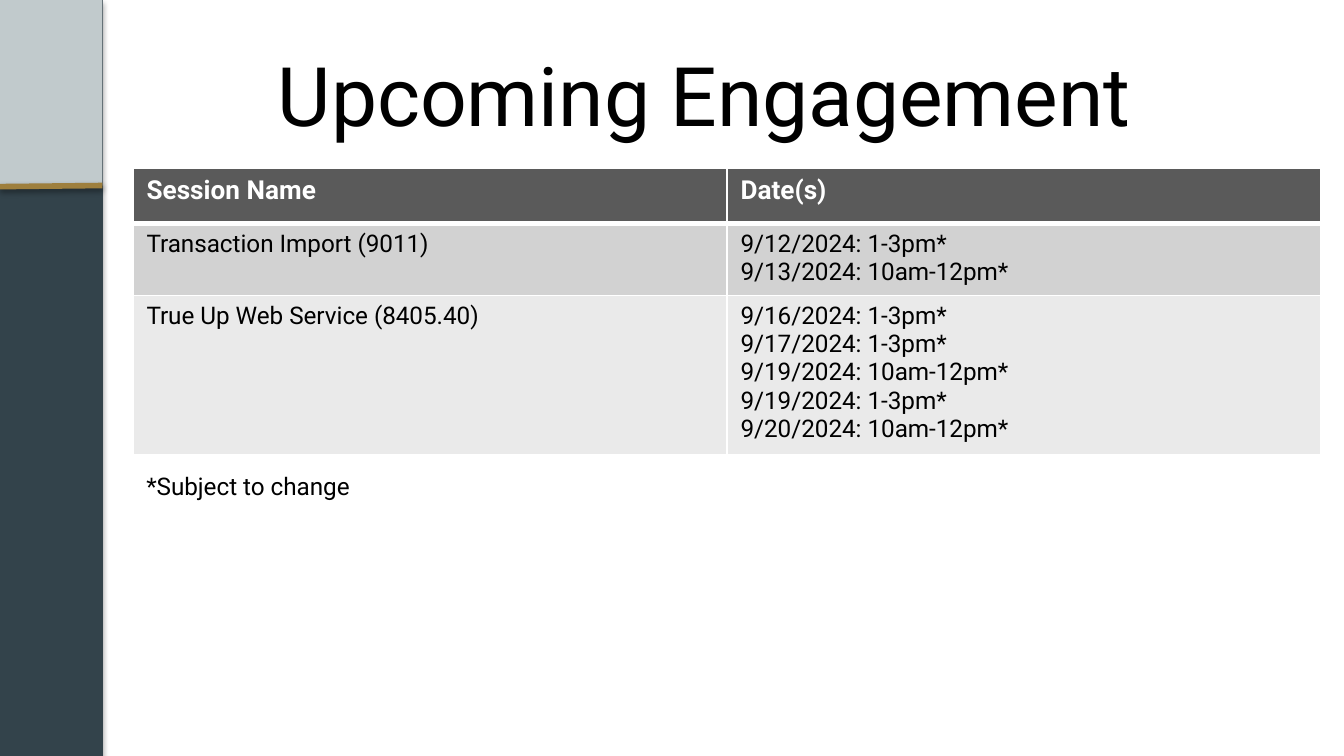
from lxml.etree import SubElement as Sub
from pptx import Presentation
from pptx.dml.color import RGBColor as RGB
from pptx.enum.shapes import MSO_CONNECTOR as Link, MSO_SHAPE as Form
from pptx.enum.text import MSO_ANCHOR as Anchor, PP_ALIGN as Align
from pptx.oxml import parse_xml
from pptx.oxml.ns import nsdecls, qn
from pptx.util import Pt

WHITE = RGB(0xFF, 0xFF, 0xFF)
BLACK = RGB(0, 0, 0)
SLATE = RGB(0x33, 0x43, 0x4B)
MIST = RGB(0xC1, 0xCA, 0xCC)
GOLD = RGB(0x9E, 0x7F, 0x3D)
HEAD = RGB(0x5A, 0x5A, 0x5A)
BANDS = [RGB(0xD2, 0xD2, 0xD2), RGB(0xEA, 0xEA, 0xEA)]
FONT = "Roboto"
WIDE, HIGH = 720, 405
SIDE = 54.9
LEFT = 71.3

ROWS = [
    ("Session Name", "Date(s)"),
    ("Transaction Import (9011)", "9/12/2024: 1-3pm*\n9/13/2024: 10am-12pm*"),
    ("True Up Web Service (8405.40)",
     "9/16/2024: 1-3pm*\n9/17/2024: 1-3pm*\n9/19/2024: 10am-12pm*\n"
     "9/19/2024: 1-3pm*\n9/20/2024: 10am-12pm*"),
]
TALL = [29.5, 37, 82.5]


def write(frame, text, size, color=BLACK, bold=False, align=Align.LEFT):
    frame.text = text
    for para in frame.paragraphs:
        para.alignment = align
        font = para.font
        font.name, font.size, font.bold = FONT, Pt(size), bold
        font.color.rgb = color


def add_text(slide, box, text, size, align=Align.LEFT, anchor=Anchor.TOP):
    frame = slide.shapes.add_textbox(*map(Pt, box)).text_frame
    frame.word_wrap = True
    frame.vertical_anchor = anchor
    write(frame, text, size, align=align)


def add_block(slide, box, color):
    block = slide.shapes.add_shape(Form.RECTANGLE, *map(Pt, box))
    block.fill.solid()
    block.fill.fore_color.rgb = color
    block.line.fill.background()
    block.shadow.inherit = False
    return block


def add_line(slide, ends, color, width):
    line = slide.shapes.add_connector(Link.STRAIGHT, *map(Pt, ends))
    line.line.color.rgb = color
    line.line.width = Pt(width)
    return line


def cast(shape, alpha, blur, dist):
    props = shape._element.spPr
    for old in props.findall(qn("a:effectLst")):
        props.remove(old)
    props.append(parse_xml(
        f'<a:effectLst {nsdecls("a")}><a:outerShdw blurRad="{Pt(blur)}" '
        f'dist="{Pt(dist)}" dir="5400000" algn="t" rotWithShape="0">'
        f'<a:srgbClr val="{BLACK}"><a:alpha val="{alpha * 1000}"/>'
        '</a:srgbClr></a:outerShdw></a:effectLst>'))


def edge(cell, base):
    props = cell._tc.get_or_add_tcPr()
    for side, width in zip("LRTB", (1, 1, 1, base)):
        line = Sub(props, qn(f"a:ln{side}"), w=str(Pt(width)))
        fill = Sub(line, qn("a:solidFill"))
        Sub(fill, qn("a:srgbClr"), val=str(WHITE))


def add_grid(slide):
    grid = slide.shapes.add_table(
        len(ROWS), 2, Pt(LEFT), Pt(90.3), Pt(636.5), Pt(sum(TALL))).table
    grid.horz_banding = False
    for i, texts in enumerate(ROWS):
        top = i == 0
        grid.rows[i].height = Pt(TALL[i])
        for j, text in enumerate(texts):
            cell = grid.cell(i, j)
            edge(cell, 3 if top else 1)
            cell.fill.solid()
            cell.fill.fore_color.rgb = HEAD if top else BANDS[i - 1]
            write(cell.text_frame, text, 14 if top else 13,
                  WHITE if top else BLACK, top)


def main():
    deck = Presentation()
    deck.slide_width, deck.slide_height = Pt(WIDE), Pt(HIGH)
    slide = deck.slides.add_slide(deck.slide_layouts[6])
    panel = add_block(slide, (0, 0, SIDE, HIGH), SLATE)
    panel.line.color.rgb = SLATE
    panel.line.width = Pt(0.75)
    cast(panel, 35, 3.1, 1.8)
    add_block(slide, (0, 0, SIDE, 99.4), MIST)
    rule = add_line(slide, (0, 100, SIDE, 99.4), GOLD, 3)
    cast(rule, 38, 3.1, 1.6)
    add_text(slide, (LEFT, 16.6, 612.7, 67.7), "Upcoming Engagement", 44,
             Align.CENTER, Anchor.MIDDLE)
    add_grid(slide)
    add_text(slide, (LEFT, 249.1, 213.8, 23), "*Subject to change", 13)
    deck.save("out.pptx")


if __name__ == "__main__":
    main()
